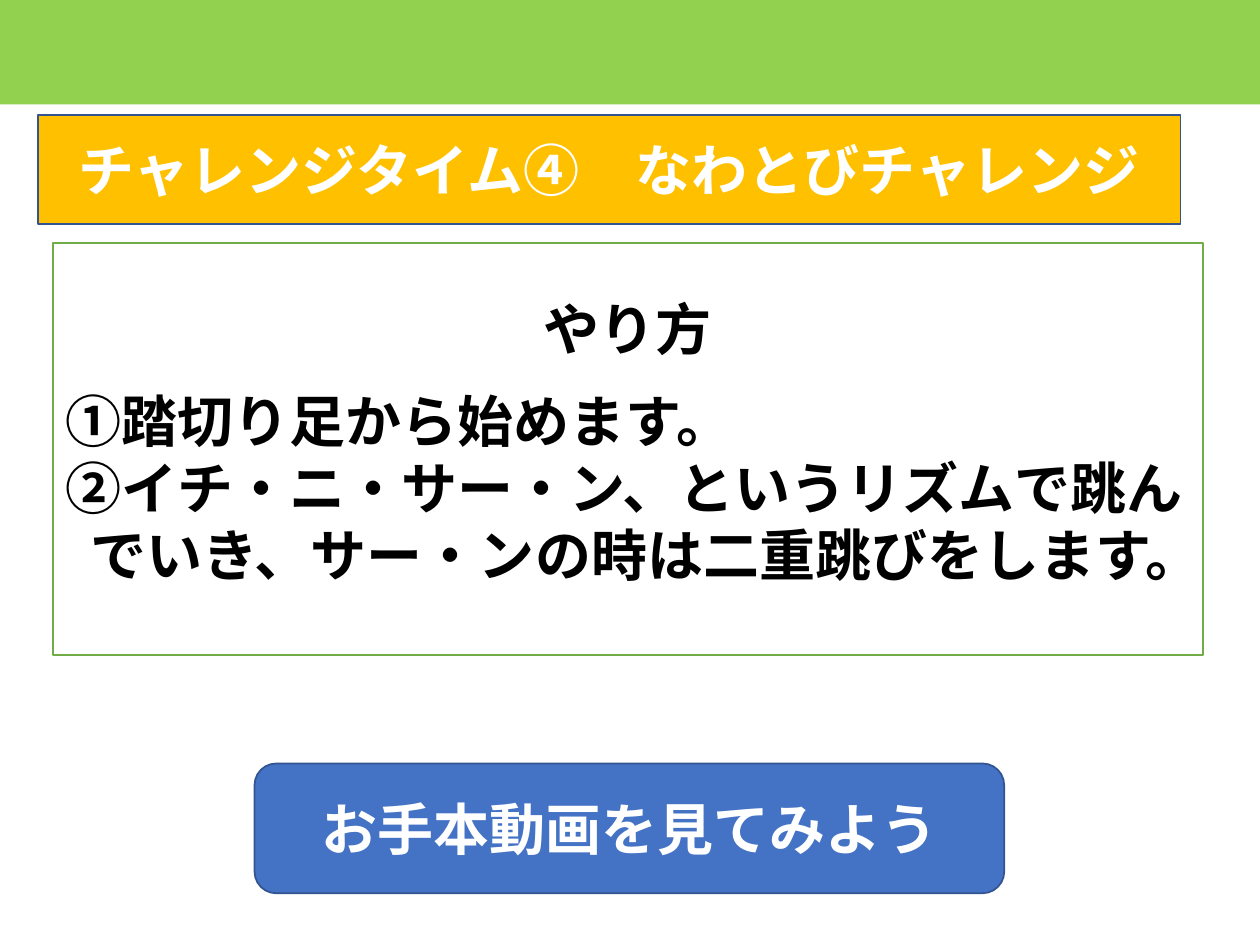
import pptx
import pptx.util
import pptx.dml.color
import pptx.enum.shapes
import pptx.enum.text
import lxml.etree
from pptx.util import Inches, Pt

COLORS = {
    "band": "92D050", "heading": "FFC000", "button": "4472C4", "edge": "325491",
    "frame": "70AD47", "white": "FFFFFF", "black": "000000",
}
FONT, SIZE = "Calibri", 32

HEADING = "チャレンジタイム④　なわとびチャレンジ"
BUTTON = "お手本動画を見てみよう"
CENTER = pptx.enum.text.PP_ALIGN.CENTER
LEFT = pptx.enum.text.PP_ALIGN.LEFT
# text, alignment, space before (pt), left indent (in)
METHOD = [
    ("やり方", CENTER, 0, 0),
    ("①踏切り足から始めます。", LEFT, 14, 0),
    ("②イチ・ニ・サー・ン、というリズムで跳ん", LEFT, 0, 0),
    ("でいき、サー・ンの時は二重跳びをします。", LEFT, 0, 0.2),
]


def rgb(name):
    return pptx.dml.color.RGBColor.from_string(COLORS[name])


def style_box(box, fill, line=None):
    box.fill.solid()
    box.fill.fore_color.rgb = rgb(fill)
    if line:
        box.line.color.rgb = rgb(line)
        box.line.width = Pt(1)
    else:
        box.line.fill.background()


def place(box, left, top, width, height):
    box.left, box.top = Inches(left), Inches(top)
    box.width, box.height = Inches(width), Inches(height)


def write(box, lines, color):
    frame = box.text_frame
    frame.word_wrap = True
    frame.auto_size = pptx.enum.text.MSO_AUTO_SIZE.NONE
    frame.vertical_anchor = pptx.enum.text.MSO_ANCHOR.MIDDLE
    for i, (text, align, before, indent) in enumerate(lines):
        paragraph = frame.paragraphs[0] if i == 0 else frame.add_paragraph()
        paragraph.text = text
        paragraph.alignment = align
        paragraph.space_before = Pt(before)
        paragraph.line_spacing = 1.0
        font = paragraph.font
        font.name, font.size, font.bold = FONT, Pt(SIZE), True
        font.color.rgb = rgb(color)
        # No bullet, plain left indent
        properties = paragraph._p.get_or_add_pPr()
        properties.set("marL", str(Inches(indent)))
        properties.set("indent", "0")
        bullet_none = lxml.etree.Element(pptx.oxml.ns.qn("a:buNone"))
        properties.insert_element_before(bullet_none, "a:tabLst", "a:defRPr", "a:extLst")


def add_shape(slide, kind, *box):
    shape = slide.shapes.add_shape(kind, *map(Inches, box))
    shape.shadow.inherit = False
    return shape


def main():
    deck = pptx.Presentation()
    deck.slide_width, deck.slide_height = Inches(10), Inches(7.5)
    slide = deck.slides.add_slide(deck.slide_layouts[1])
    shapes = pptx.enum.shapes.MSO_SHAPE

    # Heading
    heading = slide.shapes.title
    place(heading, 0.3, 0.91, 9.07, 0.87)
    style_box(heading, "heading", "edge")
    write(heading, [(HEADING, CENTER, 0, 0)], "white")

    # Method steps
    method = slide.placeholders[1]
    place(method, 0.42, 1.93, 9.13, 3.27)
    style_box(method, "white", "frame")
    write(method, METHOD, "black")
    method.text_frame.margin_bottom = Inches(0.18)

    # Top band
    band = add_shape(slide, shapes.RECTANGLE, -0.02, 0, 10.02, 0.83)
    style_box(band, "band")

    # Video button
    button = add_shape(slide, shapes.ROUNDED_RECTANGLE, 2.02, 6.06, 5.95, 1.03)
    style_box(button, "button", "edge")
    write(button, [(BUTTON, CENTER, 0, 0)], "white")

    deck.save("out.pptx")


if __name__ == "__main__":
    main()
